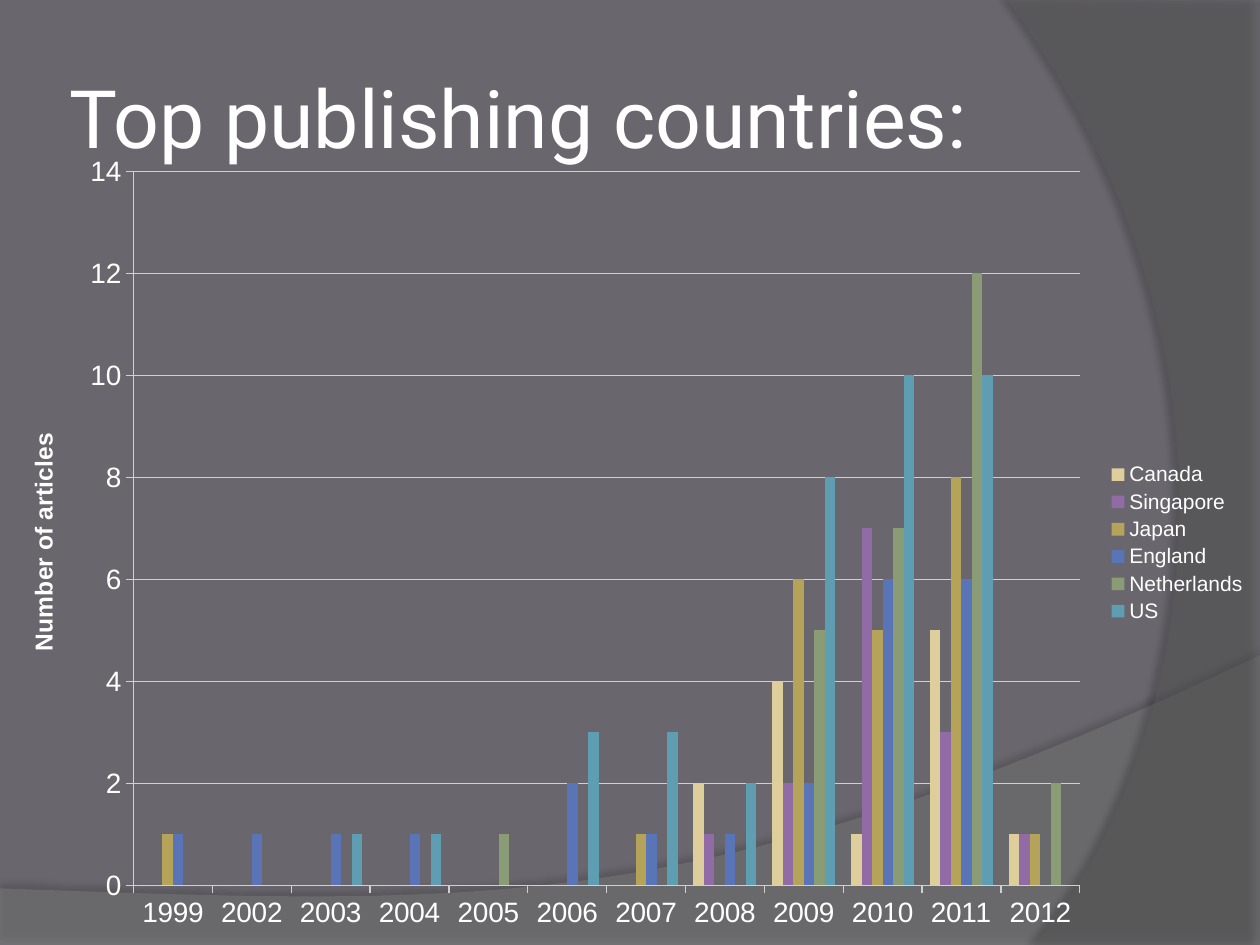
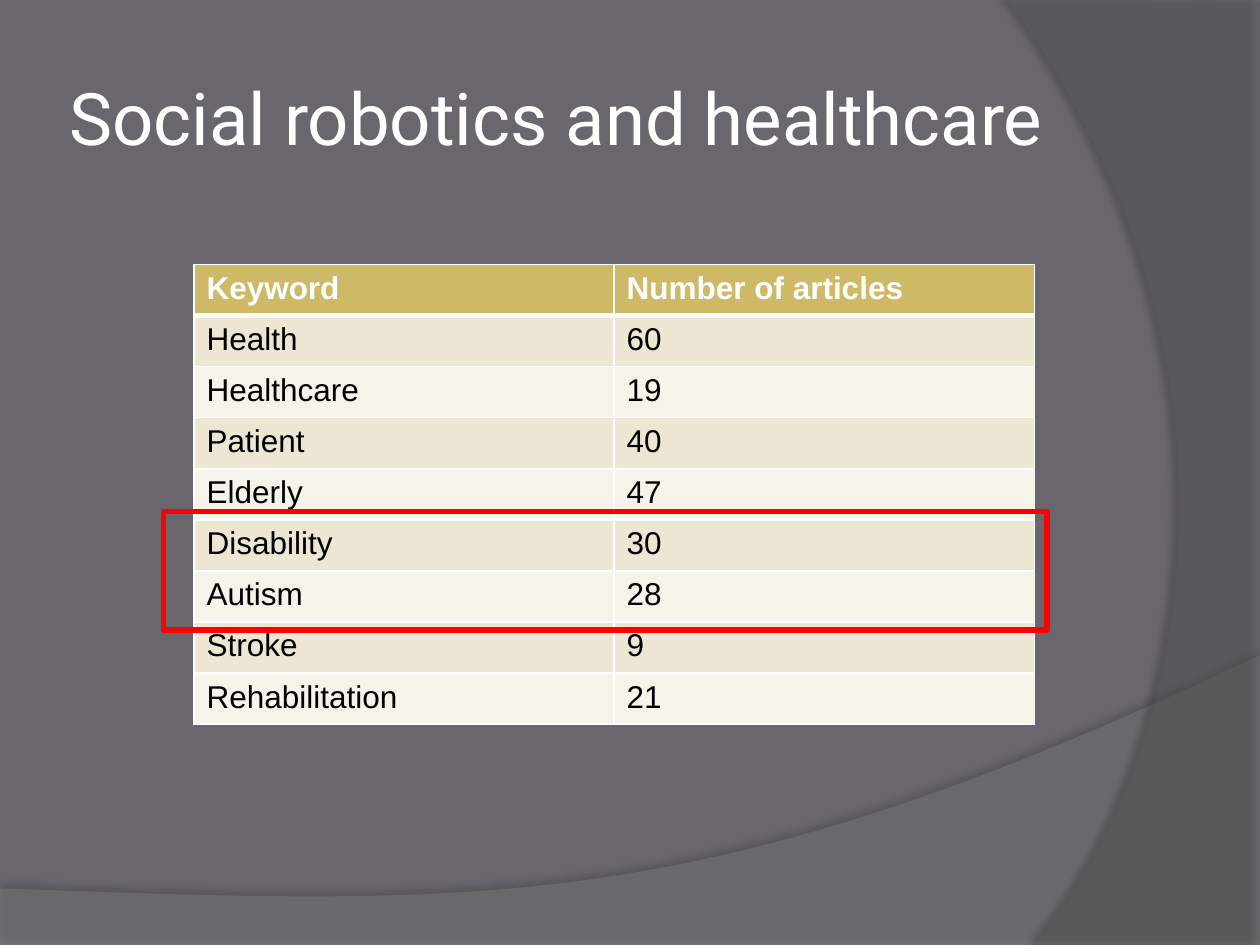
from lxml import etree
from pptx import Presentation
from pptx.chart.data import CategoryChartData
from pptx.dml.color import RGBColor
from pptx.enum import chart as ch, shapes, text
from pptx.oxml import parse_xml
from pptx.oxml import ns
from pptx.util import Cm, Pt

# Shared look
BACK = RGBColor(0x69, 0x67, 0x6D)
WAVE = RGBColor(0x7F, 0x7F, 0x7F)
ARC = RGBColor(0x5E, 0x5E, 0x5E)
WHITE = RGBColor(0xFF, 0xFF, 0xFF)
BLACK = RGBColor(0, 0, 0)
RED = RGBColor(0xFF, 0, 0)
GOLD = RGBColor(0xCE, 0xB9, 0x66)
BAND_DARK = RGBColor(0xED, 0xE6, 0xD3)
BAND_LIGHT = RGBColor(0xF6, 0xF3, 0xEA)
AXIS = RGBColor(0xD0, 0xD0, 0xD0)
TITLE_FONT, BODY_FONT = "Roboto", "Arial"

# Chart content
YEARS = ["1999"] + [str(y) for y in range(2002, 2013)]
COUNTRIES = [
    ("Canada", RGBColor(0xDD, 0xCE, 0x9B),
     [None] * 7 + [2, 4, 1, 5, 1]),
    ("Singapore", RGBColor(0x90, 0x6B, 0xA5),
     [None] * 7 + [1, 2, 7, 3, 1]),
    ("Japan", RGBColor(0xB6, 0xA3, 0x5A),
     [1] + [None] * 5 + [1, None, 6, 5, 8, 1]),
    ("England", RGBColor(0x59, 0x75, 0xB7),
     [1, 1, 1, 1, None, 2, 1, 1, 2, 6, 6, None]),
    ("Netherlands", RGBColor(0x8A, 0x9C, 0x75),
     [None] * 4 + [1, None, None, None, 5, 7, 12, 2]),
    ("US", RGBColor(0x5E, 0x9D, 0xB2),
     [None, None, 1, 1, None, 3, 3, 2, 8, 10, 10, None]),
]

# Table content
KEYWORDS = [
    ("Keyword", "Number of articles"),
    ("Health", "60"), ("Healthcare", "19"), ("Patient", "40"),
    ("Elderly", "47"), ("Disability", "30"), ("Autism", "28"),
    ("Stroke", "9"), ("Rehabilitation", "21"),
]


def style_font(font, size, color=WHITE, name=BODY_FONT, bold=False):
    font.size, font.name, font.bold = Pt(size), name, bold
    font.color.rgb = color


def add_text(tf, content, **fmt):
    r = tf.paragraphs[0].add_run()
    r.text = content
    style_font(r.font, **fmt)


def bezier(p0, p1, p2, p3, steps=48):
    """Points along a cubic curve, without its start."""
    def at(t, i):
        u = 1 - t
        return (u**3 * p0[i] + 3 * u * u * t * p1[i]
                + 3 * u * t * t * p2[i] + t**3 * p3[i])
    return [(at(n / steps, 0), at(n / steps, 1)) for n in range(1, steps + 1)]


def add_swoosh(s, corners, curve, color, alpha, shadow_alpha, dist, angle):
    """Translucent outline: straight corners, then a curve from the last."""
    points = [(Cm(x), Cm(y)) for x, y in corners + bezier(corners[-1], *curve)]
    builder = s.shapes.build_freeform(*points[0], scale=1.0)
    builder.add_line_segments(points[1:], close=True)
    sp = builder.convert_to_shape()
    sp.fill.solid()
    sp.fill.fore_color.rgb = color
    sp.line.fill.background()
    clr = sp.fill._xPr.find(".//" + ns.qn("a:srgbClr"))
    etree.SubElement(clr, ns.qn("a:alpha"), val=str(alpha * 1000))
    sp._element.spPr.append(parse_xml(
        f'<a:effectLst {ns.nsdecls("a")}><a:outerShdw blurRad="{Pt(4)}" '
        f'dist="{Pt(dist)}" dir="{angle * 60000}" algn="ctr" rotWithShape="0">'
        f'<a:srgbClr val="000000"><a:alpha val="{shadow_alpha * 1000}"/>'
        '</a:srgbClr></a:outerShdw></a:effectLst>'))


def new_slide(prs, title, size, width):
    """Blank slide with the background, both swooshes and a title."""
    s = prs.slides.add_slide(prs.slide_layouts[6])
    s.background.fill.solid()
    s.background.fill.fore_color.rgb = BACK
    add_swoosh(s, [(0, 17.91), (0, 19.05), (25.4, 19.05), (25.4, 13.21)],
               [(14.2, 18.52), (9.93, 18.26), (0, 17.91)],
               WAVE, 45, 35, 3.5, 270)
    add_swoosh(s, [(25.4, 0.05), (25.4, 19.05), (20.85, 19.05)],
               [(23.75, 15.72), (25.86, 7.62), (20.32, 0)],
               ARC, 40, 45, 4, 180)
    tf = s.shapes.add_textbox(Cm(1.27), Cm(0.76), Cm(width), Cm(3.18)).text_frame
    tf.word_wrap = True
    tf.vertical_anchor = text.MSO_ANCHOR.MIDDLE
    tf.margin_left = tf.margin_right = Cm(0.13)
    tf.margin_top = tf.margin_bottom = Cm(0.13)
    add_text(tf, title, size=size, name=TITLE_FONT)
    return s


def style_axis(axis):
    style_font(axis.tick_labels.font, 16)
    axis.major_tick_mark = ch.XL_TICK_MARK.OUTSIDE
    axis.format.line.color.rgb = AXIS
    axis.format.line.width = Pt(0.75)


def set_plot_area(chart, **fractions):
    """Fix the inner plot area as fractions of the chart."""
    area = chart._chartSpace.chart.plotArea
    for old in area.findall(ns.qn("c:layout")):
        area.remove(old)
    parts = {"layoutTarget": "inner", "xMode": "edge", "yMode": "edge", **fractions}
    layout = etree.Element(ns.qn("c:layout"))
    manual = etree.SubElement(layout, ns.qn("c:manualLayout"))
    for tag, val in parts.items():
        etree.SubElement(manual, ns.qn("c:" + tag), val=str(val))
    area.insert(0, layout)


def add_country_chart(s):
    data = CategoryChartData()
    data.categories = YEARS
    for name, _, counts in COUNTRIES:
        data.add_series(name, counts)
    chart = s.shapes.add_chart(ch.XL_CHART_TYPE.COLUMN_CLUSTERED, Cm(0), Cm(2.84),
                               Cm(25.4), Cm(16.21), data).chart
    style_font(chart.font, 10)
    chart.has_title = False
    plot = chart.plots[0]
    plot.gap_width, plot.overlap, plot.vary_by_categories = 150, 0, False
    for series, (_, color, _) in zip(plot.series, COUNTRIES):
        series.format.fill.solid()
        series.format.fill.fore_color.rgb = color
        series.invert_if_negative = False

    # Axes
    style_axis(chart.category_axis)
    values = chart.value_axis
    style_axis(values)
    values.minimum_scale, values.maximum_scale, values.major_unit = 0, 14, 2
    values.major_gridlines.format.line.color.rgb = AXIS
    values.major_gridlines.format.line.width = Pt(0.75)
    add_text(values.axis_title.text_frame, "Number of articles", size=14, bold=True)

    # Legend
    chart.has_legend = True
    chart.legend.position = ch.XL_LEGEND_POSITION.RIGHT
    chart.legend.include_in_layout = False
    style_font(chart.legend.font, 12)
    set_plot_area(chart, x=0.106, y=0.038, w=0.751, h=0.888)


def add_borders(cell, bottom):
    tcPr = cell._tc.get_or_add_tcPr()
    for side, width in (("L", 1), ("R", 1), ("T", 1), ("B", bottom)):
        tcPr.append(parse_xml(
            f'<a:ln{side} {ns.nsdecls("a")} w="{Pt(width)}"><a:solidFill>'
            f'<a:srgbClr val="{WHITE}"/></a:solidFill></a:ln{side}>'))


def add_keyword_table(s):
    table = s.shapes.add_table(len(KEYWORDS), 2, Cm(3.91), Cm(5.33), Cm(16.94),
                               Cm(1.03 * len(KEYWORDS))).table
    for i, row in enumerate(KEYWORDS):
        header = i == 0
        fill = GOLD if header else BAND_DARK if i % 2 else BAND_LIGHT
        for j, content in enumerate(row):
            cell = table.cell(i, j)
            # The rule under the header is shared with the row below it
            add_borders(cell, 3 if header else 1)
            cell.fill.solid()
            cell.fill.fore_color.rgb = fill
            add_text(cell.text_frame, content, size=18, bold=header,
                     color=WHITE if header else BLACK)


def add_highlight(s, x, y, w, h):
    sp = s.shapes.add_shape(shapes.MSO_SHAPE.RECTANGLE, Cm(x), Cm(y), Cm(w), Cm(h))
    sp.shadow.inherit = False
    sp.fill.background()
    sp.line.color.rgb = RED
    sp.line.width = Pt(3)


def main():
    prs = Presentation()
    prs.slide_width, prs.slide_height = Cm(25.4), Cm(19.05)

    s = new_slide(prs, "Top publishing countries:", size=46, width=22.63)
    add_country_chart(s)

    s = new_slide(prs, "Social robotics and healthcare", size=41.4, width=20.75)
    add_keyword_table(s)
    add_highlight(s, 3.3, 10.31, 17.81, 2.39)

    prs.save("out.pptx")


if __name__ == "__main__":
    main()
